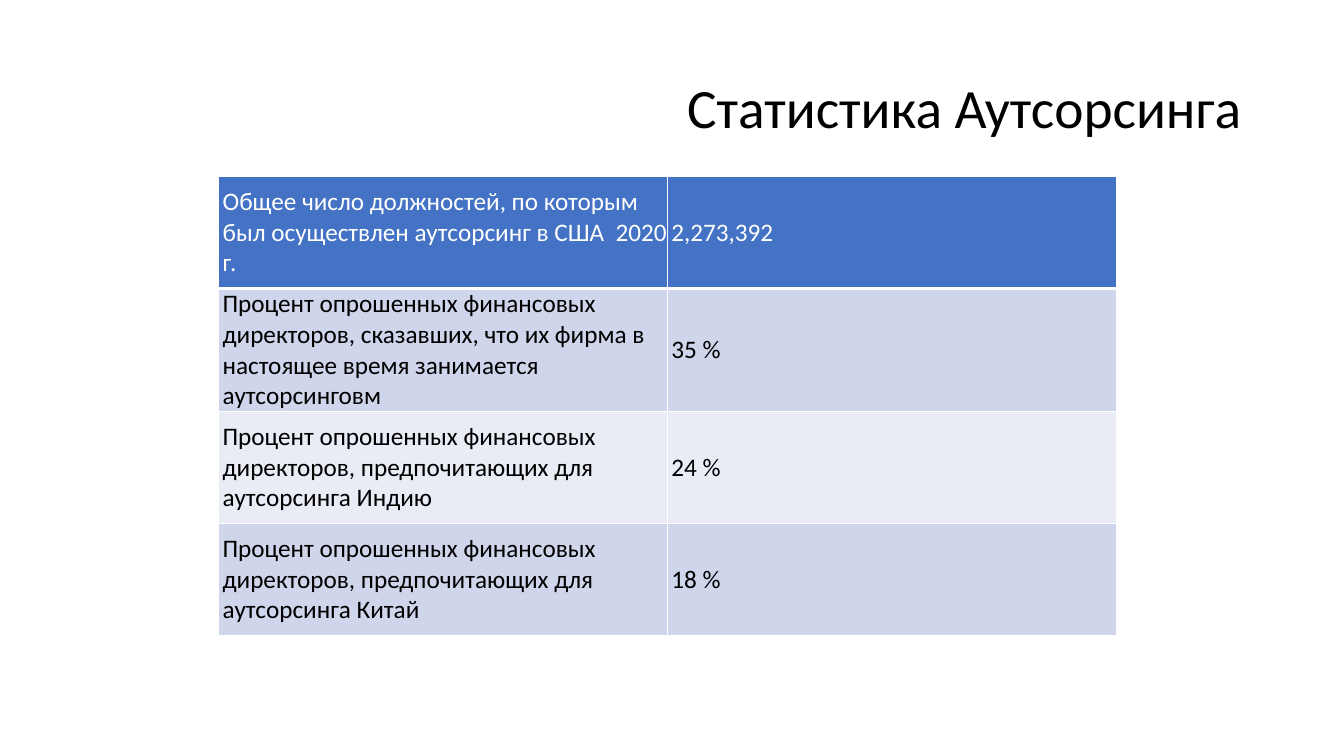
from dataclasses import dataclass

from lxml.etree import SubElement
from pptx import Presentation
from pptx.dml.color import RGBColor
from pptx.enum.text import MSO_ANCHOR, MSO_AUTO_SIZE, PP_ALIGN
from pptx.oxml.ns import qn
from pptx.slide import Slide
from pptx.table import Table, _Cell
from pptx.text.text import _Paragraph
from pptx.util import Cm, Pt

FONT = "Calibri"
BLACK = RGBColor(0x00, 0x00, 0x00)
WHITE = RGBColor(0xFF, 0xFF, 0xFF)
HEADER_BLUE = RGBColor(0x44, 0x72, 0xC4)
BAND_DARK = RGBColor(0xCF, 0xD5, 0xEA)
BAND_LIGHT = RGBColor(0xE9, 0xEB, 0xF5)


@dataclass
class StatisticRow:
    label: str
    value: str
    fill: RGBColor
    color: RGBColor = BLACK
    bottom_border: float = 1


STATISTICS = [
    StatisticRow(
        "Общее число должностей, по которым был осуществлен аутсорсинг в США  2020 г.",
        "2,273,392", HEADER_BLUE, WHITE, 3),
    StatisticRow(
        "Процент опрошенных финансовых директоров, сказавших, что их фирма "
        "в настоящее время занимается аутсорсинговм",
        "35 %", BAND_DARK),
    StatisticRow(
        "Процент опрошенных финансовых директоров, предпочитающих для аутсорсинга Индию",
        "24 %", BAND_LIGHT),
    StatisticRow(
        "Процент опрошенных финансовых директоров, предпочитающих для аутсорсинга Китай",
        "18 %", BAND_DARK),
]


def format_spans(para: _Paragraph, size: float, color: RGBColor) -> None:
    for span in para.runs:
        span.font.name = FONT
        span.font.size = Pt(size)
        span.font.bold = False
        span.font.color.rgb = color


def add_borders(cell: _Cell, bottom_width: float) -> None:
    properties = cell._tc.get_or_add_tcPr()
    widths = {"a:lnL": 1, "a:lnR": 1, "a:lnT": 1, "a:lnB": bottom_width}
    for tag, width in widths.items():
        line = SubElement(properties, qn(tag), w=str(Pt(width)))
        fill = SubElement(line, qn("a:solidFill"))
        SubElement(fill, qn("a:srgbClr"), val=str(WHITE))


def fill_cell(cell: _Cell, text: str, row: StatisticRow) -> None:
    add_borders(cell, row.bottom_border)
    cell.fill.solid()
    cell.fill.fore_color.rgb = row.fill
    cell.vertical_anchor = MSO_ANCHOR.MIDDLE
    cell.margin_left = Cm(0.1)
    cell.margin_top = cell.margin_right = cell.margin_bottom = 0
    cell.text_frame.text = text
    format_spans(cell.text_frame.paragraphs[0], 18, row.color)


def add_title(page: Slide, text: str) -> None:
    title = page.shapes.title
    title.left, title.top = Cm(16.93), Cm(2.11)
    title.width, title.height = Cm(14.61), Cm(1.35)
    frame = title.text_frame
    frame.text = text
    frame.word_wrap = True
    frame.auto_size = MSO_AUTO_SIZE.NONE
    frame.vertical_anchor = MSO_ANCHOR.MIDDLE
    para = frame.paragraphs[0]
    para.alignment = PP_ALIGN.RIGHT
    para.line_spacing = 0.9
    format_spans(para, 39.6, BLACK)


def add_statistics(page: Slide, rows: list[StatisticRow]) -> Table:
    table = page.shapes.add_table(
        len(rows), 2, Cm(5.51), Cm(4.45), Cm(22.62), Cm(2.82) * len(rows)).table
    for index, row in enumerate(rows):
        fill_cell(table.cell(index, 0), row.label, row)
        fill_cell(table.cell(index, 1), row.value, row)
    return table


def main() -> None:
    deck = Presentation()
    deck.slide_width, deck.slide_height = Cm(33.87), Cm(19.05)
    page = deck.slides.add_slide(deck.slide_layouts.get_by_name("Title Only"))
    add_title(page, "Статистика Аутсорсинга")
    add_statistics(page, STATISTICS)
    deck.save("out.pptx")


if __name__ == "__main__":
    main()
